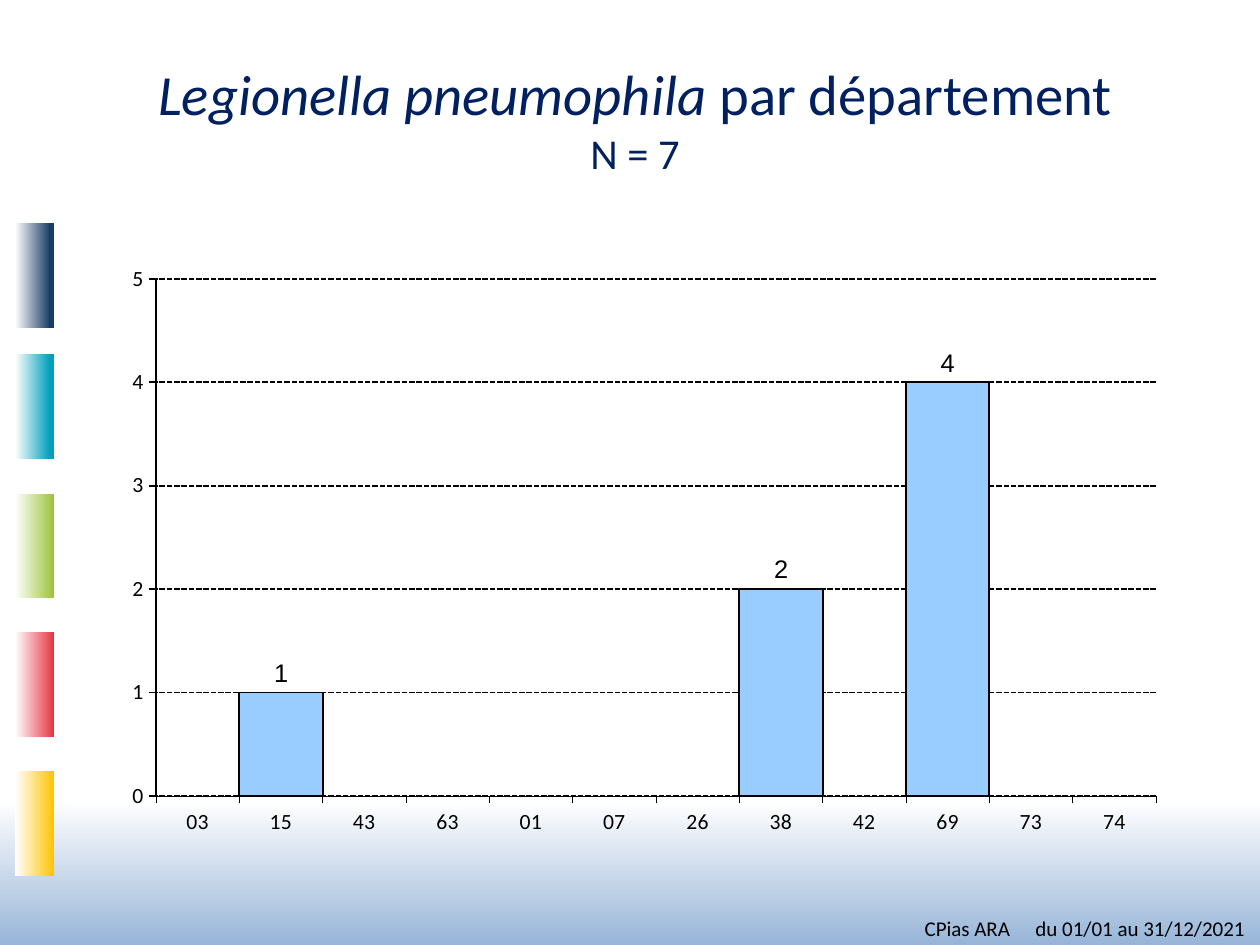
"""Build the slide charting Legionella pneumophila by département."""
from dataclasses import dataclass

from lxml.etree import SubElement
from pptx import Presentation
from pptx.chart.chart import Chart
from pptx.chart.data import CategoryChartData
from pptx.dml.color import RGBColor
from pptx.enum.chart import XL_CHART_TYPE as ChartType
from pptx.enum.chart import XL_LABEL_POSITION as LabelPosition
from pptx.enum.chart import XL_TICK_MARK as TickMark
from pptx.enum.dml import MSO_LINE_DASH_STYLE as DashStyle
from pptx.enum.shapes import MSO_SHAPE as ShapeType
from pptx.enum.text import MSO_ANCHOR as Anchor
from pptx.enum.text import MSO_AUTO_SIZE as AutoSize
from pptx.enum.text import PP_ALIGN as Align
from pptx.oxml import parse_xml
from pptx.oxml.ns import nsdecls, qn
from pptx.slide import Slide
from pptx.text.text import Font
from pptx.util import Inches, Pt

BLACK = RGBColor(0x00, 0x00, 0x00)
WHITE = RGBColor(0xFF, 0xFF, 0xFF)
NAVY = RGBColor(0x00, 0x20, 0x60)
MIST = RGBColor(0x95, 0xB3, 0xD7)
BAR_BLUE = RGBColor(0x99, 0xCC, 0xFF)
DEPARTMENTS = ["03", "15", "43", "63", "01", "07", "26", "38", "42", "69", "73", "74"]
CASES = {"15": 1, "38": 2, "69": 4}
PLOT_AREA = {"x": 0.031, "y": 0.05, "w": 0.954, "h": 0.871}


@dataclass
class Fade:
    """A rotated rectangle that fades from a colour to white."""
    left: float
    top: float
    width: float
    height: float
    rotation: int
    color: RGBColor
    start: float = 0


@dataclass
class TitleSpan:
    """A run of the title."""
    text: str
    size: float
    italic: bool = False


FADES = [
    Fade(0, 6.35, 10, 1.18, 180, MIST),
    Fade(-0.14, 2.03, 0.83, 0.31, 90, RGBColor(0x19, 0x3C, 0x64), 0.1),
    Fade(-0.14, 3.07, 0.83, 0.31, 90, RGBColor(0x00, 0x9F, 0xBB), 0.1),
    Fade(-0.14, 4.18, 0.83, 0.31, 90, RGBColor(0x9C, 0xC2, 0x39)),
    Fade(-0.14, 5.28, 0.83, 0.31, 90, RGBColor(0xE5, 0x35, 0x40)),
    Fade(-0.14, 6.38, 0.83, 0.31, 90, RGBColor(0xFD, 0xC3, 0x00)),
]
TITLE_LINES = [
    [TitleSpan("Legionella pneumophila ", 32.4, True), TitleSpan("par département", 32.4)],
    [TitleSpan("N = 7", 24.3)],
]


def style_font(font: Font, size: float, color: RGBColor, name: str = "Calibri") -> None:
    """Set the face, size and colour of a font."""
    font.name = name
    font.size = Pt(size)
    font.bold = False
    font.color.rgb = color


def add_fade(page: Slide, fade: Fade) -> None:
    """Draw one fading rectangle."""
    shape = page.shapes.add_shape(
        ShapeType.RECTANGLE, Inches(fade.left), Inches(fade.top),
        Inches(fade.width), Inches(fade.height))
    shape.rotation = fade.rotation
    shape.shadow.inherit = False
    shape.line.fill.background()
    shape.fill.gradient()
    shape.fill.gradient_angle = 270
    first, last = shape.fill.gradient_stops
    first.color.rgb, first.position = fade.color, fade.start
    last.color.rgb, last.position = WHITE, 1


def fill_title(page: Slide) -> None:
    """Place and write the two-line title."""
    title = page.shapes.title
    title.left, title.top = Inches(1.14), Inches(0.44)
    title.width, title.height = Inches(7.8), Inches(1)
    frame = title.text_frame
    frame.auto_size = AutoSize.NONE
    frame.vertical_anchor = Anchor.MIDDLE
    para = frame.paragraphs[0]
    para.alignment = Align.CENTER
    for number, line in enumerate(TITLE_LINES):
        if number:
            para.add_line_break()
        for part in line:
            span = para.add_run()
            span.text = part.text
            style_font(span.font, part.size, NAVY)
            span.font.italic = part.italic


def set_plot_area(chart: Chart) -> None:
    """Fix the inner plot area as fractions of the chart."""
    area = chart.plots[0]._element.getparent()
    for old in area.findall(qn("c:layout")):
        area.remove(old)
    layout = parse_xml(f"<c:layout {nsdecls('c')}/>")
    manual = SubElement(layout, qn("c:manualLayout"))
    settings = {"layoutTarget": "inner", "xMode": "edge", "yMode": "edge", **PLOT_AREA}
    for tag, value in settings.items():
        SubElement(manual, qn(f"c:{tag}")).set("val", str(value))
    area.insert(0, layout)


def add_case_chart(page: Slide) -> None:
    """Draw the column chart of cases by département."""
    data = CategoryChartData()
    data.categories = DEPARTMENTS
    data.add_series("Series 1", [CASES.get(name) for name in DEPARTMENTS])
    chart = page.shapes.add_chart(
        ChartType.COLUMN_CLUSTERED, Inches(0.98), Inches(1.98),
        Inches(8.32), Inches(4.71), data).chart
    chart.has_legend = False
    chart.has_title = False
    style_font(chart.font, 18.6, BLACK, "Montserrat")
    set_plot_area(chart)

    for axis, width in ((chart.category_axis, 0.25), (chart.value_axis, 1.04)):
        axis.major_tick_mark = TickMark.OUTSIDE
        axis.minor_tick_mark = TickMark.NONE
        style_font(axis.tick_labels.font, 12.4, BLACK)
        axis.format.line.color.rgb = BLACK
        axis.format.line.width = Pt(width)
    values = chart.value_axis
    values.minimum_scale, values.maximum_scale, values.major_unit = 0, 5, 1
    values.has_major_gridlines = True
    grid = values.major_gridlines.format.line
    grid.color.rgb = BLACK
    grid.width = Pt(1.04)
    grid.dash_style = DashStyle.SQUARE_DOT

    plot = chart.plots[0]
    plot.gap_width = 0
    plot.vary_by_categories = False
    series = plot.series[0]
    series.format.fill.solid()
    series.format.fill.fore_color.rgb = BAR_BLUE
    series.format.line.color.rgb = BLACK
    series.format.line.width = Pt(1.04)
    labels = series.data_labels
    labels.show_value = True
    labels.position = LabelPosition.OUTSIDE_END
    style_font(labels.font, 14.5, BLACK, "Arial")


def add_source_note(page: Slide) -> None:
    """Write the source and period in the bottom corner."""
    box = page.shapes.add_textbox(Inches(7.24), Inches(7.22), Inches(2.76), Inches(0.3))
    frame = box.text_frame
    frame.word_wrap = True
    frame.auto_size = AutoSize.SHAPE_TO_FIT_TEXT
    para = frame.paragraphs[0]
    para.text = "CPias ARA\tdu 01/01 au 31/12/2021"
    tabs = SubElement(para._p.get_or_add_pPr(), qn("a:tabLst"))
    tab = SubElement(tabs, qn("a:tab"))
    tab.set("pos", str(Inches(0.88)))
    tab.set("algn", "l")
    style_font(para.runs[0].font, 12, BLACK)


def main() -> None:
    """Build and save the deck."""
    deck = Presentation()
    deck.slide_width, deck.slide_height = Inches(10), Inches(7.5)
    page = deck.slides.add_slide(deck.slide_layouts[5])
    for fade in FADES:
        add_fade(page, fade)
    add_case_chart(page)
    fill_title(page)
    add_source_note(page)
    deck.save("out.pptx")


if __name__ == "__main__":
    main()
